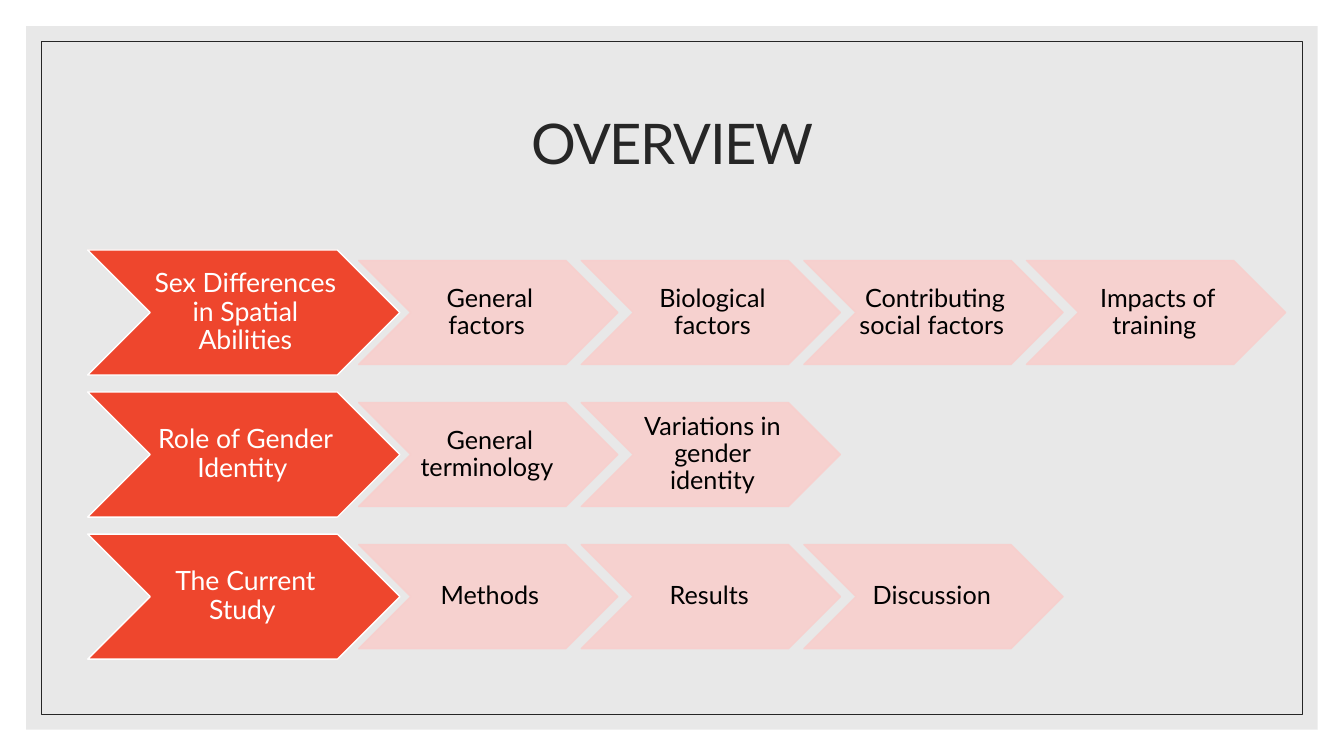
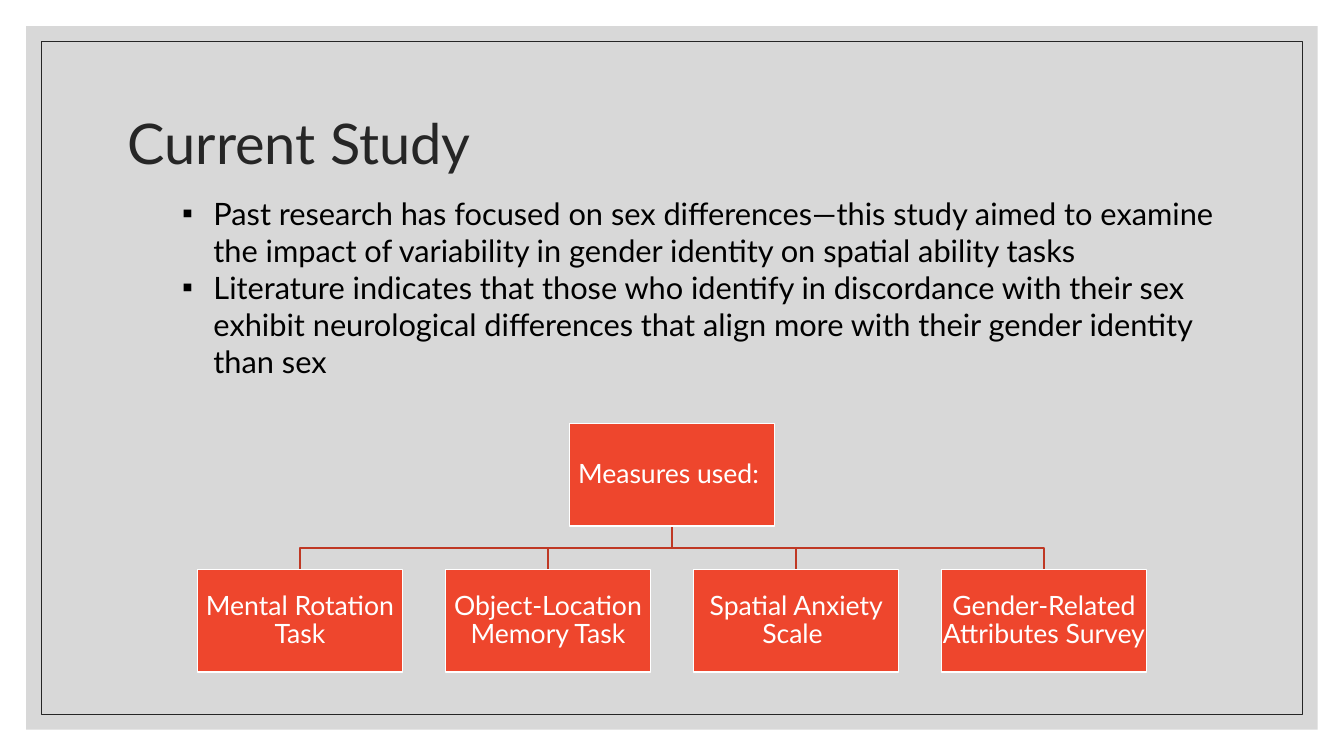
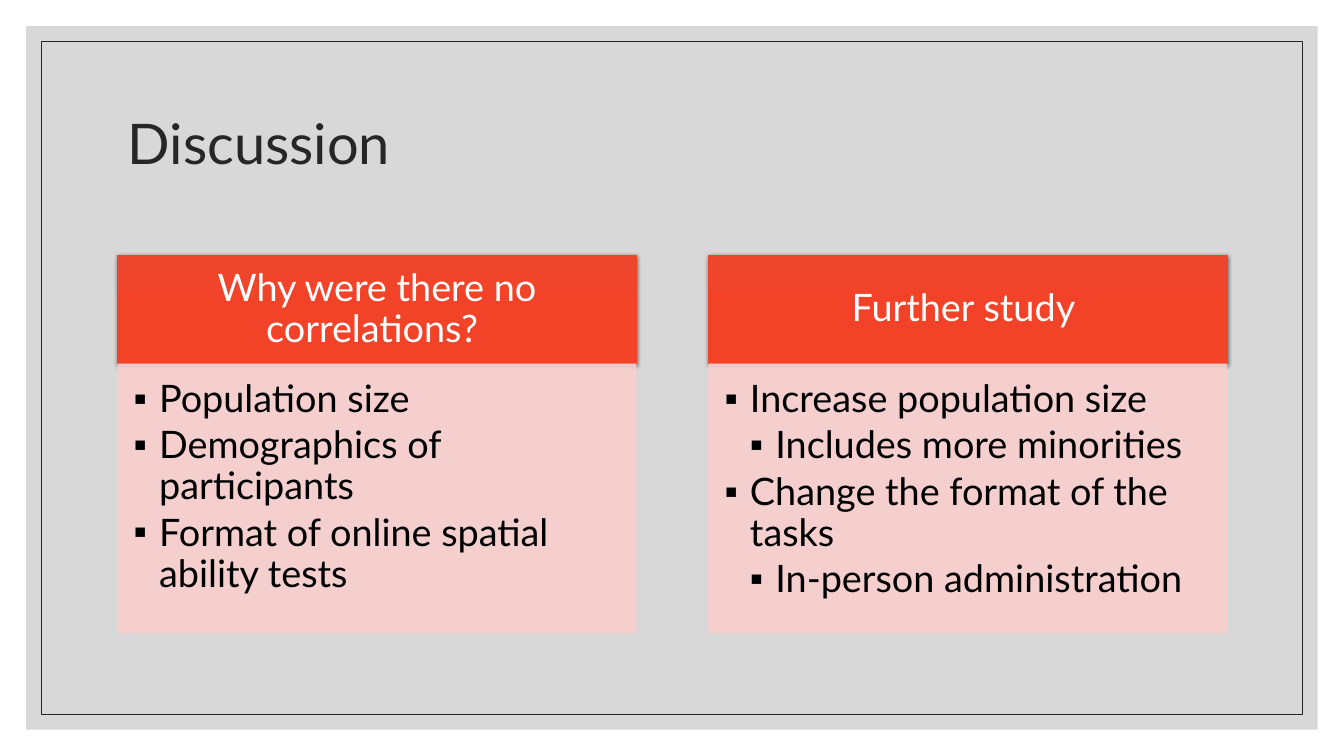
from pptx import Presentation
from pptx.dml.color import RGBColor
from pptx.enum.shapes import MSO_SHAPE
from pptx.enum.text import MSO_ANCHOR, MSO_AUTO_SIZE, PP_ALIGN
from pptx.oxml.ns import qn
from pptx.util import Cm, Pt
from lxml import etree

RECT, CHEVRON = MSO_SHAPE.RECTANGLE, MSO_SHAPE.CHEVRON
TOP, MIDDLE = MSO_ANCHOR.TOP, MSO_ANCHOR.MIDDLE
LEFT, CENTER = PP_ALIGN.LEFT, PP_ALIGN.CENTER
NO_AUTOFIT = MSO_AUTO_SIZE.NONE

FONT = "Lato"
COLORS = {
    "white": "FFFFFF", "black": "000000", "ink": "262626",
    "light_gray": "D9D9D9", "gray": "BFBFBF",
    "red": "EE462D", "deep_red": "F24228", "branch": "BF3824", "pink": "F8CFCD",
}
SLIDE_W, SLIDE_H = 33.87, 19.05
TITLE_ONLY, ONE_LIST, TWO_LISTS = 5, 1, 3  # layouts of the default template

TOPICS = [
    ("Sex Differences in Spatial Abilities",
     ["General factors ", "Biological factors", "Contributing social factors ",
      "Impacts of training "]),
    ("Role of Gender Identity ",
     ["General terminology ", "Variations in gender identity"]),
    ("The Current Study ", ["Methods", "Results ", "Discussion "]),
]
AIMS = [
    (1, "Past research has focused on sex differences—this study aimed to examine "
        "the impact of variability in gender identity on spatial ability tasks"),
    (1, "Literature indicates that those who identify in discordance with their sex "
        "exhibit neurological differences that align more with their gender identity "
        "than sex"),
]
MEASURES = ["Mental Rotation Task", "Object-Location Memory Task",
            "Spatial Anxiety Scale ", "Gender-Related Attributes Survey"]
CONCLUSIONS = [
    ("Why were there no correlations? ",
     [(1, "Population size"), (1, "Demographics of participants"),
      (1, "Format of online spatial ability tests")]),
    ("Further study ",
     [(1, "Increase population size"), (2, "Includes more minorities"),
      (1, "Change the format of the tasks"), (2, "In-person administration")]),
]


def rgb(name):
    return RGBColor.from_string(COLORS[name])


def place(shape, x, y, w, h):
    shape.left, shape.top, shape.width, shape.height = Cm(x), Cm(y), Cm(w), Cm(h)


def to_front(shape):
    shape._element.getparent().append(shape._element)


def paint(shape, fill=None, line=None, width=1, opacity=100):
    """Set fill, outline and opacity; None leaves the part empty."""
    if fill:
        shape.fill.solid()
        shape.fill.fore_color.rgb = rgb(fill)
    else:
        shape.fill.background()
    if line:
        shape.line.color.rgb = rgb(line)
        shape.line.width = Pt(width)
    else:
        shape.line.fill.background()
    if opacity < 100:
        for color in shape._element.spPr.iter(qn("a:srgbClr")):
            etree.SubElement(color, qn("a:alpha"), val=str(opacity * 1000))


def add_block(slide, preset, x, y, w, h, **look):
    block = slide.shapes.add_shape(preset, Cm(x), Cm(y), Cm(w), Cm(h))
    block.shadow.inherit = False
    paint(block, **look)
    return block


def write(shape, text, size=19, color="white", align=CENTER, anchor=MIDDLE,
          insets=(0.25, 0.13, 0.25, 0.13), spacing=0.9, after=0, indent=None,
          tracking=None):
    """Write a string, or a list of (level, text) bullets when indent is given."""
    frame = shape.text_frame
    frame.word_wrap, frame.auto_size = True, NO_AUTOFIT
    frame.vertical_anchor = anchor
    (frame.margin_left, frame.margin_top,
     frame.margin_right, frame.margin_bottom) = map(Cm, insets)
    items = [(1, text)] if isinstance(text, str) else text
    for number, (level, words) in enumerate(items):
        paragraph = frame.add_paragraph() if number else frame.paragraphs[0]
        paragraph.alignment, paragraph.line_spacing = align, spacing
        paragraph.space_before, paragraph.space_after = Pt(0), Pt(after)
        run = paragraph.add_run()
        run.text = words
        run.font.name, run.font.size = FONT, Pt(size)
        run.font.color.rgb = rgb(color)
        if tracking:
            run._r.get_or_add_rPr().set("spc", str(tracking * 100))
        if indent:
            paragraph.level = level - 1
            properties = paragraph._p.get_or_add_pPr()
            properties.set("marL", str(Cm(indent * level)))
            properties.set("indent", str(-Cm(indent)))
            etree.SubElement(properties, qn("a:buChar"), char="▪")


def new_slide(deck, layout, title, backdrop="gray", **title_format):
    """Add a slide with the shared backdrop, thin frame and title."""
    slide = deck.slides.add_slide(deck.slide_layouts[layout])
    placeholders = list(slide.placeholders)
    for inset, look in ((0.66, {"fill": backdrop, "opacity": 60}),
                        (1.04, {"line": "ink", "width": 0.5})):
        add_block(slide, RECT, inset, inset, SLIDE_W - 2 * inset,
                  SLIDE_H - 2 * inset, **look)
    for placeholder in placeholders:
        to_front(placeholder)
    place(slide.shapes.title, 2.97, 1.78, 27.94, 3.81)
    write(slide.shapes.title, title, size=40, color="ink",
          **{"align": LEFT, **title_format})
    return slide


def add_topic_row(slide, y, topic, steps):
    """One large chevron followed by its smaller steps."""
    insets = (0.08, 0.03, 0, 0.03)
    lead_h, step_h = 3.15, 2.62
    lead = add_block(slide, CHEVRON, 2.21, y, 7.87, lead_h, fill="red", line="white")
    write(lead, topic, insets=insets)
    for column, step in enumerate(steps):
        chevron = add_block(slide, CHEVRON, 9.04 + 5.61 * column,
                            y + (lead_h - step_h) / 2, 6.53, step_h,
                            fill="pink", line="pink", opacity=90)
        write(chevron, step, size=18, color="black", insets=insets)


def add_branch(slide, x1, y1, x2, y2):
    """Elbow line from a parent box down to a child box."""
    middle = (y1 + y2) / 2
    builder = slide.shapes.build_freeform(Cm(x1), Cm(y1))
    builder.add_line_segments(
        [(Cm(x1), Cm(middle)), (Cm(x2), Cm(middle)), (Cm(x2), Cm(y2))], close=False)
    branch = builder.convert_to_shape()
    branch.shadow.inherit = False
    paint(branch, line="branch")


def add_measure_tree(slide, root, children):
    box_w, box_h, pitch = 5.16, 2.59, 6.25
    root_y, child_y, center = 10.67, 14.35, SLIDE_W / 2
    centers = [center + pitch * (i - (len(children) - 1) / 2)
               for i in range(len(children))]
    for child_center in centers:
        add_branch(slide, center, root_y + box_h, child_center, child_y)
    boxes = [(center, root_y, root)]
    boxes += [(x, child_y, label) for x, label in zip(centers, children)]
    for x, y, label in boxes:
        box = add_block(slide, RECT, x - box_w / 2, y, box_w, box_h,
                        fill="red", line="white")
        write(box, label, insets=(0.03,) * 4)


def add_shaded_header(slide, x, y, w, h, text):
    header = add_block(slide, RECT, x, y, w, h, line="red", width=0.5)
    header.fill.gradient()
    header.fill.gradient_angle = 270
    for stop, name, position in zip(header.fill.gradient_stops,
                                    ("red", "deep_red"), (0, 0.5)):
        stop.color.rgb, stop.position = rgb(name), position
    effects = header._element.spPr.find(qn("a:effectLst"))
    shadow = etree.SubElement(effects, qn("a:outerShdw"), blurRad=str(Pt(3)),
                              dist=str(Pt(1)), dir="5400000", rotWithShape="0")
    shade = etree.SubElement(shadow, qn("a:srgbClr"), val=COLORS["black"])
    etree.SubElement(shade, qn("a:alpha"), val="63000")
    write(header, text, size=27, insets=(0.53, 0.3, 0.53, 0.3))


def add_overview(deck):
    slide = new_slide(deck, TITLE_ONLY, "OVERVIEW", backdrop="light_gray",
                      align=CENTER, tracking=-1)
    for row, (topic, steps) in enumerate(TOPICS):
        add_topic_row(slide, 6.3 + 3.58 * row, topic, steps)


def add_current_study(deck):
    slide = new_slide(deck, ONE_LIST, "Current Study")
    aims = slide.placeholders[1]
    place(aims, 4.34, 4.78, 26.54, 5.89)
    write(aims, AIMS, size=22, color="black", align=LEFT, anchor=TOP,
          spacing=1, indent=0.79)
    add_measure_tree(slide, "Measures used: ", MEASURES)


def add_discussion(deck):
    slide = new_slide(deck, TWO_LISTS, "Discussion")
    column_w, header_y, header_h = 13.06, 6.43, 2.74
    for column, (heading, points) in enumerate(CONCLUSIONS):
        x = 2.97 + 14.89 * column
        add_shaded_header(slide, x, header_y, column_w, header_h, heading)
        panel = slide.placeholders[column + 1]
        place(panel, x, header_y + header_h, column_w, 6.78)
        paint(panel, fill="pink", line="pink", width=0.5, opacity=90)
        write(panel, points, size=27, color="black", align=LEFT, anchor=TOP,
              insets=(0.4, 0.4, 0.53, 0.6), after=4, indent=0.64)
        to_front(panel)


def main():
    deck = Presentation()
    deck.slide_width, deck.slide_height = Cm(SLIDE_W), Cm(SLIDE_H)
    add_overview(deck)
    add_current_study(deck)
    add_discussion(deck)
    deck.save("out.pptx")


if __name__ == "__main__":
    main()
